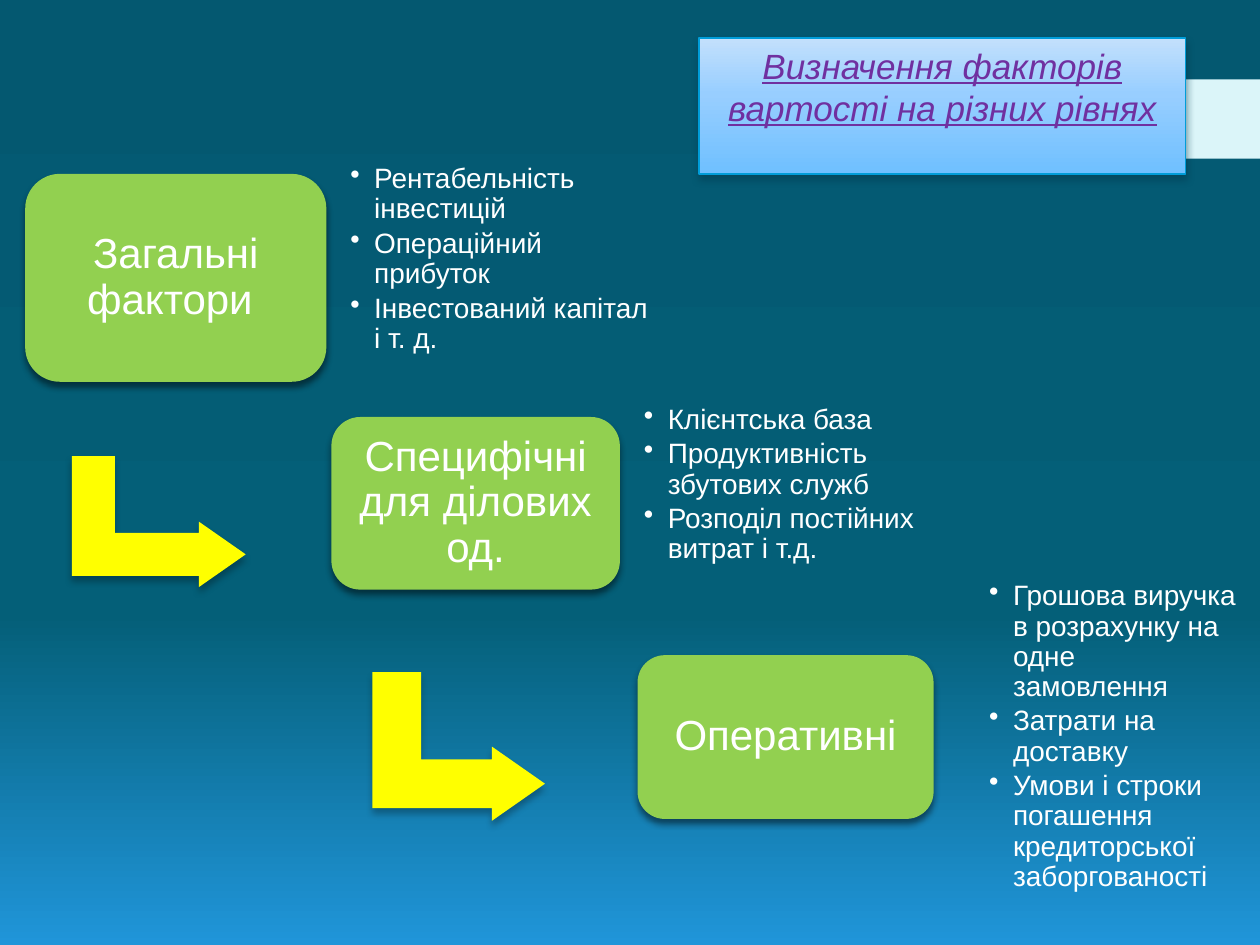
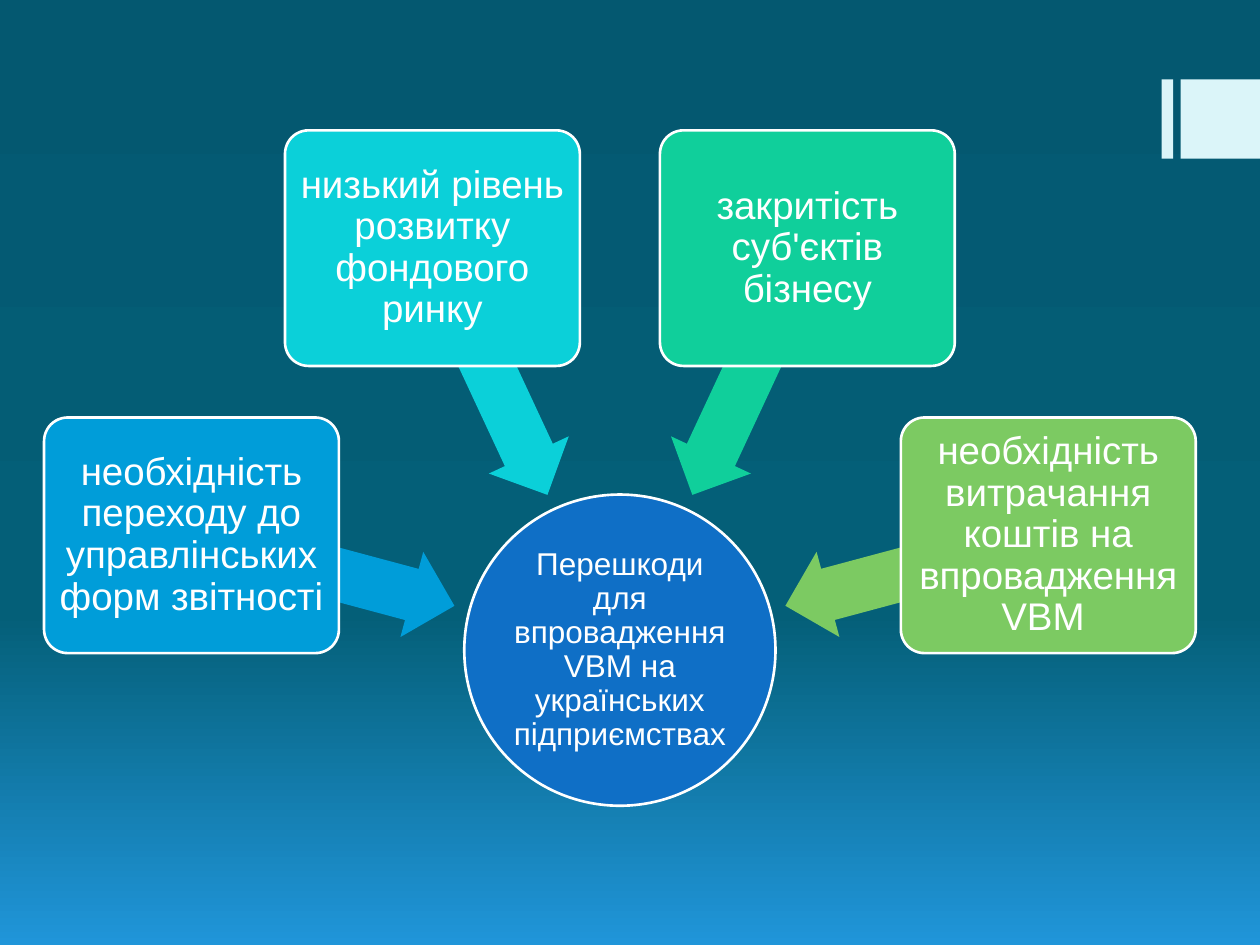
from copy import deepcopy
from math import cos, radians, sin

from lxml.etree import SubElement
from pptx import Presentation
from pptx.dml.color import RGBColor
from pptx.enum.shapes import MSO_SHAPE
from pptx.enum.text import MSO_ANCHOR, PP_ALIGN
from pptx.oxml.ns import qn
from pptx.util import Inches, Pt

FONT = "Arial"
WHITE = "FFFFFF"
BAND = "DBF5F9"
STEP_GREEN = "92D050"
ARROW_YELLOW = "FFFF00"
BACKGROUND_STOPS = [(0, "045870"), (0.65, "045F78"), (1, "2095D9")]
TITLE_STOPS = [(0, "C3E0FC"), (0.41, "98CEFF"), (1, "6FC0FF")]


def add_shape(slide, kind, box, fill, line=None, line_width=1.5,
              adjustments=(), rotation=0, shadow=None):
    """Add a preset shape; box is in inches, shadow is (colour, opacity %, blur pt)."""
    shape = slide.shapes.add_shape(kind, *[Inches(length) for length in box])
    shape.rotation = rotation
    for index, value in enumerate(adjustments):
        shape.adjustments[index] = value
    shape.fill.solid()
    shape.fill.fore_color.rgb = RGBColor.from_string(fill)
    if line:
        shape.line.color.rgb = RGBColor.from_string(line)
        shape.line.width = Pt(line_width)
    else:
        shape.line.fill.background()
    shape.shadow.inherit = False
    if shadow:
        shadow_color, opacity, blur = shadow
        effects = shape.element.spPr.find(qn("a:effectLst"))
        outer = SubElement(effects, qn("a:outerShdw"), blurRad=str(Pt(blur)),
                           dist=str(Pt(3)), dir="5400000", rotWithShape="0")
        color = SubElement(outer, qn("a:srgbClr"), val=shadow_color)
        SubElement(color, qn("a:alpha"), val=str(opacity * 1000))
    return shape


def write_text(shape, *texts, size, color=WHITE, inset=0.1, align=PP_ALIGN.CENTER,
               anchor=MSO_ANCHOR.MIDDLE, line_spacing=0.9, bullets=False,
               italic=False, underline=False):
    """Write one paragraph for each of the texts."""
    frame = shape.text_frame
    frame.word_wrap = True
    frame.vertical_anchor = anchor
    frame.margin_left = frame.margin_right = Inches(inset)
    frame.margin_top = frame.margin_bottom = Inches(inset)
    for index, text in enumerate(texts):
        paragraph = frame.add_paragraph() if index else frame.paragraphs[0]
        paragraph.alignment = align
        paragraph.line_spacing = line_spacing
        run = paragraph.add_run()
        run.text = text
        run.font.name = FONT
        run.font.size = Pt(size)
        run.font.italic = italic
        run.font.underline = underline
        run.font.color.rgb = RGBColor.from_string(color)
        if bullets:
            paragraph.space_after = Pt(2.5)
            properties = paragraph._p.get_or_add_pPr()
            properties.set("marL", str(Inches(0.19)))
            properties.set("indent", str(-Inches(0.19)))
            SubElement(properties, qn("a:buChar"), char="•")


presentation = Presentation()
presentation.slide_width = Inches(10)
presentation.slide_height = Inches(7.5)
blank_layout = presentation.slide_layouts[6]
factors_slide, obstacles_slide = [
    presentation.slides.add_slide(blank_layout) for _ in range(2)]
for slide in (factors_slide, obstacles_slide):
    for left, width in [(9.22, 0.09), (9.37, 0.63)]:
        add_shape(slide, MSO_SHAPE.RECTANGLE, (left, 0.63, width, 0.63), BAND)

# Slide 1: levels of value factors
for arrow_box in [(0.74, 3.45, 1.04, 1.38), (3.05, 5.24, 1.18, 1.37)]:
    add_shape(factors_slide, MSO_SHAPE.BENT_UP_ARROW, arrow_box, ARROW_YELLOW,
              adjustments=(0.328, 0.25, 0.358), rotation=90,
              shadow=("000000", 28, 4))

levels = [
    ("Загальні фактори ", (0.2, 1.38, 2.39, 1.65), (2.71, 1.35, 2.55, 1.42),
     ["Рентабельність інвестицій", "Операційний прибуток",
      "Інвестований капітал і т. д."]),
    ("Специфічні для ділових од.", (2.63, 3.31, 2.29, 1.37), (5.04, 3.14, 2.66, 1.42),
     ["Клієнтська база", "Продуктивність збутових служб",
      "Розподіл постійних витрат і т.д."]),
    ("Оперативні", (5.06, 5.2, 2.35, 1.3), (7.78, 5, 2.1, 1.7),
     ["Грошова виручка в розрахунку на одне замовлення", "Затрати на доставку",
      "Умови і строки погашення кредиторської заборгованості"]),
]
for level, level_box, factors_box, factors in levels:
    level_shape = add_shape(factors_slide, MSO_SHAPE.ROUNDED_RECTANGLE, level_box,
                            STEP_GREEN, adjustments=[0.167],
                            shadow=("000000", 48, 3.8))
    write_text(level_shape, level, size=24)
    factors_text = factors_slide.shapes.add_textbox(
        *[Inches(length) for length in factors_box])
    write_text(factors_text, *factors, size=16, inset=0.07,
               align=PP_ALIGN.LEFT, bullets=True)

title = add_shape(factors_slide, MSO_SHAPE.RECTANGLE, (5.55, 0.3, 3.86, 1.08),
                  "98CEFF", line="009DD9", line_width=1,
                  shadow=("00374C", 48, 4.5))
write_text(title, "Визначення факторів вартості на різних рівнях", size=20,
           color="7030A0", inset=0.05, anchor=MSO_ANCHOR.TOP, line_spacing=1,
           italic=True, underline=True)

# Slide 2: obstacles around a hub
HUB_X, HUB_Y, HUB_SIZE = 4.92, 5.16, 2.47
ARROW_RADIUS, ARROW_WIDTH, ARROW_HEIGHT = 2.44, 2.16, 0.7
CARD_RADIUS, CARD_WIDTH, CARD_HEIGHT = 3.52, 2.34, 1.87

hub = add_shape(obstacles_slide, MSO_SHAPE.OVAL,
                (HUB_X - HUB_SIZE / 2, HUB_Y - HUB_SIZE / 2, HUB_SIZE, HUB_SIZE),
                "0F6FC6", line=WHITE)
write_text(hub, "Перешкоди для впровадження VBM на українських підприємствах",
           size=18, inset=0.01)

obstacles = [
    ("необхідність переходу до управлінських форм звітності", "009DD9"),
    ("низький рівень розвитку фондового ринку", "0BD0D9"),
    ("закритість суб'єктів бізнесу", "10CF9B"),
    ("необхідність витрачання коштів на впровадження VBM ", "7CCA62"),
]
for index, (obstacle, color) in enumerate(obstacles):
    angle = 195 + 50 * index
    across, down = cos(radians(angle)), sin(radians(angle))
    add_shape(obstacles_slide, MSO_SHAPE.LEFT_ARROW,
              (HUB_X + ARROW_RADIUS * across - ARROW_WIDTH / 2,
               HUB_Y + ARROW_RADIUS * down - ARROW_HEIGHT / 2,
               ARROW_WIDTH, ARROW_HEIGHT),
              color, adjustments=(0.6, 0.5), rotation=angle)
    card = add_shape(obstacles_slide, MSO_SHAPE.ROUNDED_RECTANGLE,
                     (HUB_X + CARD_RADIUS * across - CARD_WIDTH / 2,
                      HUB_Y + CARD_RADIUS * down - CARD_HEIGHT / 2,
                      CARD_WIDTH, CARD_HEIGHT),
                     color, line=WHITE, adjustments=[0.1])
    write_text(card, obstacle, size=22, inset=0.05)

# Three-stop vertical gradients: shared background and title box
master = presentation.slide_master
for fill, element, stops in [
    (master.background.fill, master.element, BACKGROUND_STOPS),
    (title.fill, title.element, TITLE_STOPS),
]:
    fill.gradient()
    fill.gradient_angle = 270
    stop_list = element.find(".//" + qn("a:gsLst"))
    stop_list.append(deepcopy(stop_list[-1]))
    for stop, (position, color) in zip(fill.gradient_stops, stops):
        stop.position = position
        stop.color.rgb = RGBColor.from_string(color)

presentation.save("out.pptx")
